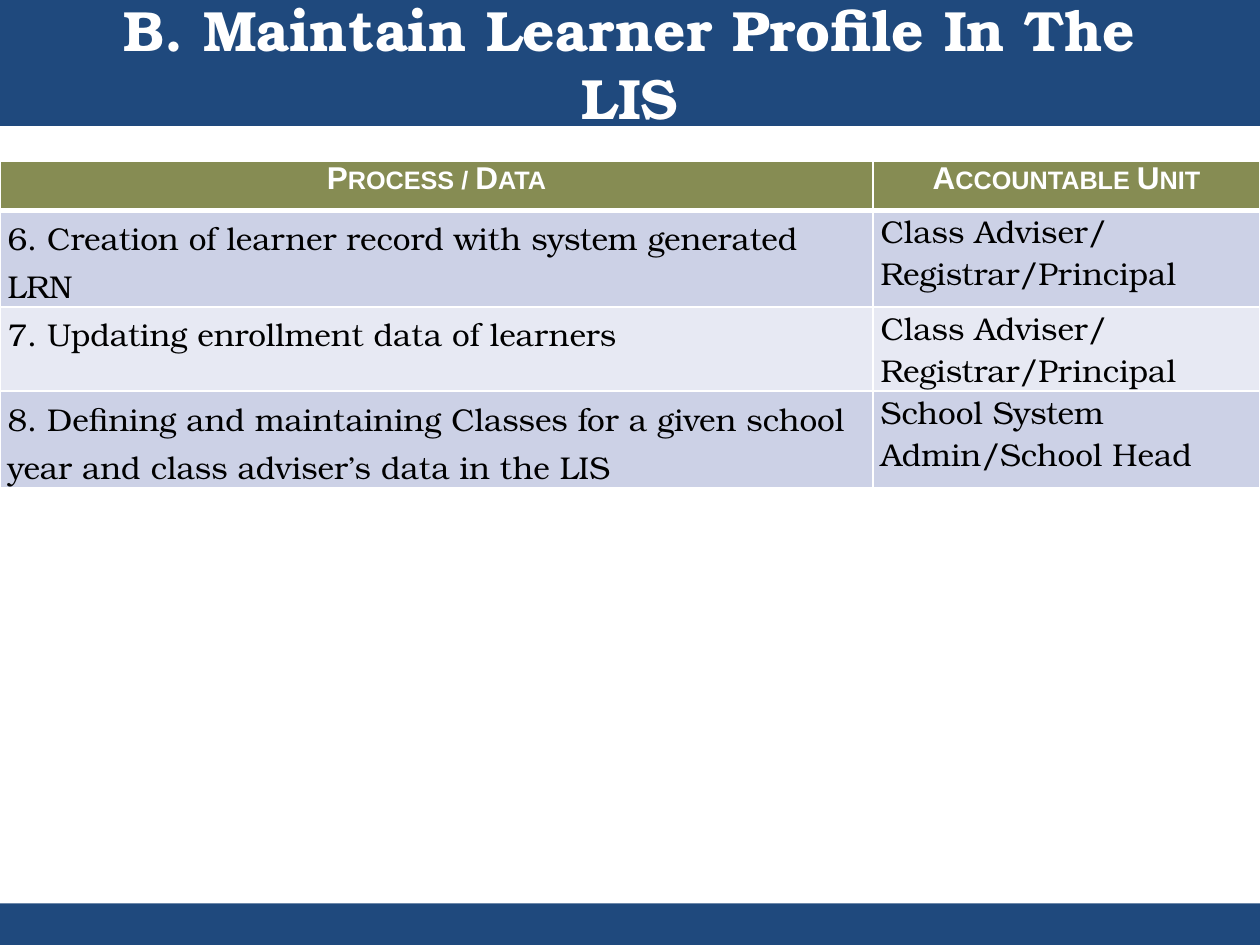
"""Build the slide on maintaining learner profiles in the LIS."""
from lxml import etree
from pptx import Presentation
from pptx import util as u
from pptx.dml.color import RGBColor
from pptx.enum import shapes, text
from pptx.oxml import ns

SERIF, SANS = "TeX Gyre Bonum", "Arial"
NAVY, OLIVE, WHITE, BLACK = "1F497D", "868C53", "FFFFFF", "000000"
BANDS = ["CCD1E6", "E7E9F3"]


def tint(part, code):
    part.fill.solid()
    part.fill.fore_color.rgb = RGBColor.from_string(code)


def write(frame, words, size=18, face=SERIF, color=BLACK, bold=False,
          align=None, after=None, lead=None, small=False):
    para = frame.paragraphs[0]
    para.alignment, para.space_after, para.line_spacing = align, after, lead
    run = para.add_run()
    run.text = words
    font = run.font
    font.size, font.name, font.bold = u.Pt(size), face, bold
    font.color.rgb = RGBColor.from_string(color)
    if small:
        run._r.get_or_add_rPr().set("cap", "small")


deck = Presentation()
deck.slide_width, deck.slide_height = u.Inches(10), u.Inches(7.5)
slide = deck.slides.add_slide(deck.slide_layouts[5])
title = slide.shapes.title

for top, high in [(7.17, 0.33), (0, 1)]:
    band = slide.shapes.add_shape(shapes.MSO_SHAPE.RECTANGLE, 0, u.Inches(top),
                                  u.Inches(10), u.Inches(high))
    band.shadow.inherit = False
    tint(band, NAVY)
    band.line.fill.background()

slide.shapes._spTree.append(title._element)
title.left, title.top = u.Inches(0.5), 0
title.width, title.height = u.Inches(9), u.Inches(1)
frame = title.text_frame
frame.auto_size = text.MSO_AUTO_SIZE.NONE
frame.vertical_anchor = text.MSO_ANCHOR.MIDDLE
write(frame, "B. Maintain Learner Profile In The LIS", size=32.4, color=WHITE,
      bold=True, align=text.PP_ALIGN.CENTER)

rows = [
    ("Process / Data", "Accountable Unit"),
    ("6. Creation of learner record with system generated LRN",
     "Class Adviser/ Registrar/Principal"),
    ("7. Updating enrollment data of learners",
     "Class Adviser/ Registrar/Principal"),
    ("8. Defining and maintaining Classes for a given school year and "
     "class adviser’s data in the LIS", "School System Admin/School Head"),
]
holder = slide.shapes.add_table(len(rows), 2, 0, u.Inches(1.28),
                                u.Inches(10), u.Inches(2.37))
table = holder.table
for col, wide in zip(table.columns, [6.93, 3.07]):
    col.width = u.Inches(wide)
for row, high in zip(table.rows, [0.39, 0.39, 0.39, 0.63]):
    row.height = u.Inches(high)
holder.height = u.Inches(2.37)

for r, row in enumerate(rows):
    for c, words in enumerate(row):
        cell = table.cell(r, c)
        cell.margin_left = cell.margin_right = u.Inches(0.06)
        cell.margin_top = cell.margin_bottom = 0
        props = cell._tc.get_or_add_tcPr()
        for side in "LRTB":
            thick = 3 if (r, side) in [(0, "B"), (1, "T")] else 1
            edge = etree.SubElement(props, ns.qn("a:ln" + side), w=str(u.Pt(thick)))
            fill = etree.SubElement(edge, ns.qn("a:solidFill"))
            etree.SubElement(fill, ns.qn("a:srgbClr"), val=WHITE)
        if r == 0:
            tint(cell, OLIVE)
            write(cell.text_frame, words, face=SANS, color=WHITE, bold=True,
                  align=text.PP_ALIGN.CENTER, after=u.Pt(6), small=True)
        else:
            tint(cell, BANDS[(r - 1) % 2])
            write(cell.text_frame, words, after=u.Pt(6),
                  lead=1.15 if c == 0 else None)

deck.save("out.pptx")
